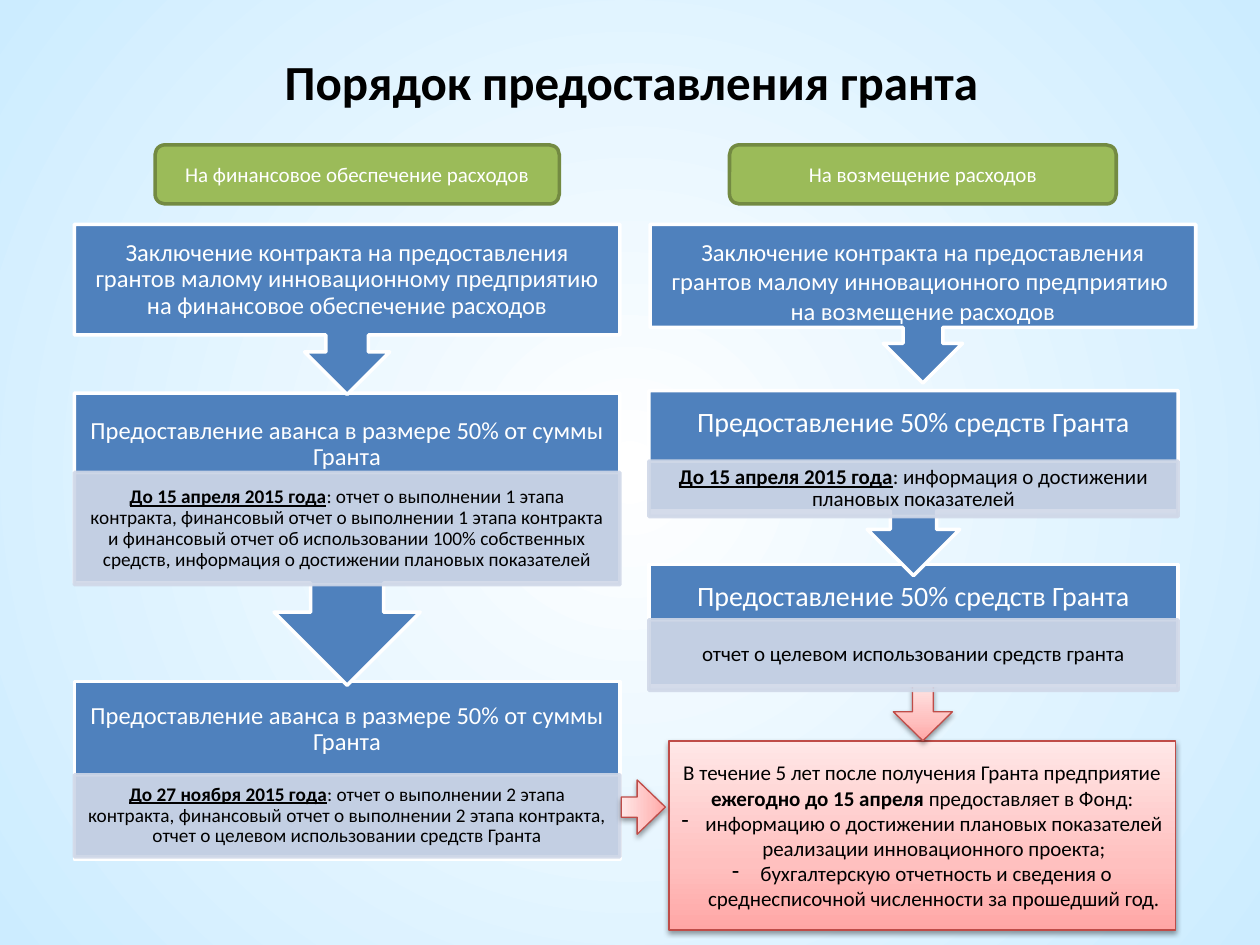
from pptx import Presentation
from pptx.dml.color import RGBColor
from pptx.enum.shapes import MSO_SHAPE
from pptx.enum.text import MSO_ANCHOR, PP_ALIGN
from pptx.oxml import parse_xml
from pptx.oxml.ns import nsdecls, qn
from pptx.util import Pt

RECT, ROUND = MSO_SHAPE.RECTANGLE, MSO_SHAPE.ROUNDED_RECTANGLE
CALLOUT, ARROW = MSO_SHAPE.DOWN_ARROW_CALLOUT, MSO_SHAPE.DOWN_ARROW
MIDDLE, CENTER = MSO_ANCHOR.MIDDLE, PP_ALIGN.CENTER

THEME = {
    "font": "Calibri", "black": "000000", "white": "FFFFFF",
    "blue": "4F81BD", "pale": "D0D8E8", "green": "9BBB59", "olive": "738A42",
    "red": "BF4C48",
    "pink": [(0, "FFA6A5"), (35, "FFC0BF"), (100, "FFE7E7")],
    "sky": [(0, "FFFFFF"), (100, "CCECFF")],
    "title": 28, "large": 16, "head": 14, "body": 12, "small": 11,
}

TITLE = "Порядок предоставления гранта"
# Text is a list of paragraphs; a paragraph is a list of (words, style),
# where b is bold and u is underlined.
TAGS = [
    (88.6, 231, "На финансовое обеспечение расходов"),
    (416.9, 221, "На возмещение расходов"),
]
ADVANCE = [[("Предоставление аванса в размере 50% от суммы Гранта", "")]]
HALF = [[("Предоставление 50% средств Гранта", "")]]
LEFT, RIGHT = (42.5, 311.8), (370.8, 302.4)

# column, shape, top, height, head height, head text, head size, line
# spacing, strip: (top, height, text, size)
STEPS_LEFT = [
    (LEFT, RECT, 389.5, 101.5, 54.7, ADVANCE, "head", 0.9,
     (442.8, 46.8, [[
         ("До 27 ноября 2015 года", "bu"),
         (": отчет о выполнении 2 этапа контракта, финансовый отчет о "
          "выполнении 2 этапа контракта, отчет о целевом использовании "
          "средств Гранта", "")]], "small")),
    (LEFT, CALLOUT, 224.6, 167, 59, ADVANCE, "head", 0.9,
     (270, 64.1, [[
         ("До 15 апреля 2015 года", "bu"),
         (": отчет о выполнении 1 этапа контракта, финансовый отчет о "
          "выполнении 1 этапа контракта и финансовый отчет об использовании "
          "100% собственных средств, информация о достижении плановых "
          "показателей", "")]], "small")),
    (LEFT, CALLOUT, 128.2, 97.2, 63.4, [[
        ("Заключение контракта на предоставления грантов малому "
         "инновационному предприятию на финансовое обеспечение расходов",
         "")]], "head", 0.9, None),
    ((371.5, 311.8), CALLOUT, 128.2, 90.7, 64.6, [
        [("Заключение контракта на предоставления грантов малому "
          "инновационного предприятию ", "")],
        [("на возмещение расходов", "")]], "head", 1, None),
]
STEPS_RIGHT = [
    (RIGHT, RECT, 322.6, 69.1, 37.4, HALF, "large", 0.9,
     (354.2, 40.3,
      [[("отчет о целевом использовании средств гранта", "")]], "body")),
    (RIGHT, CALLOUT, 223.2, 105.8, 37.4, HALF, "large", 0.9,
     (263.5, 31.7, [[
         ("До 15 апреля 2015 года", "bu"),
         (": информация о достижении плановых показателей", "")]], "body")),
]
NOTE = [
    [("В течение 5 лет после получения Гранта предприятие ", ""),
     ("ежегодно до 15 апреля ", "b"), ("предоставляет в Фонд:", "")],
    [("информацию о достижении плановых показателей реализации "
      "инновационного проекта;", "")],
    [(" бухгалтерскую отчетность и сведения о среднесписочной численности "
      "за прошедший год.", "")],
]
NOTE_BOX = (382.3, 423.4, 289.4, 108)
# box, turn, shaft and head ratios
ARROWS = [
    ((352.1, 448.6, 31, 25.2), 270, (0.37, 0.64)),
    ((510.5, 390.2, 33.8, 33.1), 0, (0.35, 0.5)),
]


def color(name):
    return RGBColor.from_string(THEME[name])


def blend(fill, root, stops, way):
    """Give fill, found below root, its colour stops and direction."""
    fill.gradient()
    old = root.find(".//" + qn("a:gradFill"))
    marks = "".join(f'<a:gs pos="{pos * 1000}"><a:srgbClr val="{rgb}"/></a:gs>'
                    for pos, rgb in stops)
    new = parse_xml(f'<a:gradFill {nsdecls("a")} rotWithShape="1">'
                    f'<a:gsLst>{marks}</a:gsLst>{way}</a:gradFill>')
    old.getparent().replace(old, new)


def write(frame, paras, size, ink, space=1, inset=(7.2, 3.6)):
    frame.word_wrap = True
    frame.vertical_anchor = MIDDLE
    frame.margin_left = frame.margin_right = Pt(inset[0])
    frame.margin_top = frame.margin_bottom = Pt(inset[1])
    for i, parts in enumerate(paras):
        para = frame.add_paragraph() if i else frame.paragraphs[0]
        para.alignment = CENTER
        para.line_spacing = space
        for words, style in parts:
            run = para.add_run()
            run.text = words
            font = run.font
            font.name, font.size = THEME["font"], Pt(THEME[size])
            font.bold, font.underline = "b" in style, "u" in style
            font.color.rgb = color(ink)


def draw(slide, kind, box, fill, line, width=2.0):
    shape = slide.shapes.add_shape(kind, *map(Pt, box))
    shape.shadow.inherit = False
    if fill == "pink":
        blend(shape.fill, shape._element.spPr, THEME[fill],
              '<a:lin ang="16200000" scaled="1"/>')
    else:
        shape.fill.solid()
        shape.fill.fore_color.rgb = color(fill)
    shape.line.color.rgb = color(line)
    shape.line.width = Pt(width)
    return shape


def draw_pink(slide, kind, box):
    shape = draw(slide, kind, box, "pink", "red", 0.75)
    shape._element.spPr.find(qn("a:effectLst")).append(parse_xml(
        f'<a:outerShdw {nsdecls("a")} blurRad="{Pt(3.1)}" dist="{Pt(1.6)}" '
        'dir="5400000" rotWithShape="0"><a:srgbClr val="000000">'
        '<a:alpha val="38000"/></a:srgbClr></a:outerShdw>'))
    return shape


def add_step(slide, col, kind, top, tall, cap, text, size, space, strip):
    left, wide = col
    draw(slide, kind, (left, top, wide, tall), "blue", "white")
    head = slide.shapes.add_textbox(*map(Pt, (left, top, wide, cap)))
    write(head.text_frame, text, size, "white", space, (7.5, 7.5))
    if strip:
        low, deep, words, small = strip
        band = draw(slide, RECT, (left, low, wide, deep), "pale", "pale")
        for tint in band._element.spPr.iter(qn("a:srgbClr")):
            tint.append(parse_xml(f'<a:alpha {nsdecls("a")} val="90000"/>'))
        write(band.text_frame, words, small, "black", 0.9, (6.5, 1.4))


def add_note(slide):
    note = draw_pink(slide, RECT, NOTE_BOX)
    write(note.text_frame, NOTE, "body", "black")
    for para in note.text_frame.paragraphs[1:]:
        props = para._p.get_or_add_pPr()
        props.set("marL", str(Pt(13.5)))
        props.set("indent", str(-Pt(13.5)))
        props.append(parse_xml(f'<a:buChar {nsdecls("a")} char="-"/>'))


def main():
    deck = Presentation()
    deck.slide_width, deck.slide_height = Pt(720), Pt(540)
    slide = deck.slides.add_slide(deck.slide_layouts[5])
    blend(slide.background.fill, slide._element, THEME["sky"],
          '<a:path path="circle"><a:fillToRect l="50000" t="50000" '
          'r="50000" b="50000"/></a:path>')

    title = slide.shapes.title
    title.left, title.top, title.width, title.height = map(
        Pt, (36.7, 9.4, 648, 73.4))
    write(title.text_frame, [[(TITLE, "b")]], "title", "black")

    for left, wide, text in TAGS:
        tag = draw(slide, ROUND, (left, 82.8, wide, 33.8), "green", "olive")
        write(tag.text_frame, [[(text, "")]], "body", "white")
    for step in STEPS_LEFT:
        add_step(slide, *step)
    add_note(slide)
    for box, turn, ratios in ARROWS:
        arrow = draw_pink(slide, ARROW, box)
        arrow.rotation = turn
        arrow.adjustments[0], arrow.adjustments[1] = ratios
    for step in STEPS_RIGHT:
        add_step(slide, *step)
    deck.save("out.pptx")


if __name__ == "__main__":
    main()
